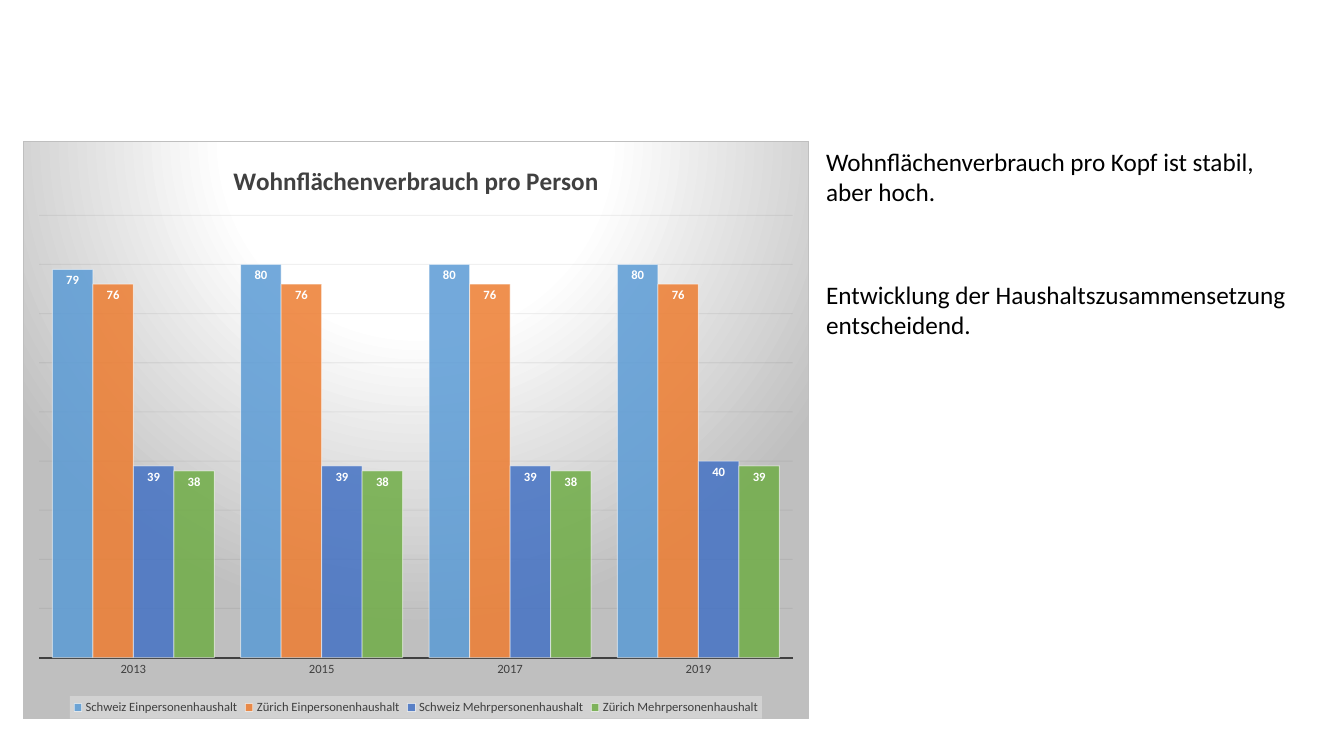
from lxml import etree
from pptx import Presentation
from pptx.chart.data import CategoryChartData
from pptx.dml.color import RGBColor
from pptx.enum.chart import XL_CHART_TYPE as ChartType
from pptx.enum.chart import XL_LABEL_POSITION as LabelPosition
from pptx.enum.chart import XL_LEGEND_POSITION as LegendPosition
from pptx.enum.chart import XL_TICK_LABEL_POSITION as TickLabels
from pptx.enum.chart import XL_TICK_MARK as TickMark
from pptx.enum.text import MSO_AUTO_SIZE as AutoSize
from pptx.oxml import parse_xml
from pptx.oxml.ns import nsdecls, qn
from pptx.util import Pt

FONT = "Calibri"
BLACK = RGBColor(0x00, 0x00, 0x00)
WHITE = RGBColor(0xFF, 0xFF, 0xFF)
DARK_GREY = RGBColor(0x40, 0x40, 0x40)
GRID = RGBColor(0x0D, 0x0D, 0x0D)
SILVER = RGBColor(0xBF, 0xBF, 0xBF)
PALE_GREY = RGBColor(0xF2, 0xF2, 0xF2)
BLUE = RGBColor(0x5B, 0x9B, 0xD5)
ORANGE = RGBColor(0xED, 0x7D, 0x31)
NAVY = RGBColor(0x44, 0x72, 0xC4)
GREEN = RGBColor(0x70, 0xAD, 0x47)

TITLE = "Wohnflächenverbrauch pro Person"
YEARS = ["2013", "2015", "2017", "2019"]
HOUSEHOLDS = [
    ("Schweiz Einpersonenhaushalt", (79, 80, 80, 80), BLUE),
    ("Zürich Einpersonenhaushalt", (76, 76, 76, 76), ORANGE),
    ("Schweiz Mehrpersonenhaushalt", (39, 39, 39, 40), NAVY),
    ("Zürich Mehrpersonenhaushalt", (38, 38, 38, 39), GREEN),
]
STATEMENTS = [
    ("Wohnflächenverbrauch pro Kopf ist stabil, aber hoch.", 100.8),
    ("Entwicklung der Haushaltszusammensetzung entscheidend.", 195.84),
]
GRADIENT_STOPS = [(0, WHITE), (39, WHITE), (100, SILVER)]
CHART_WIDTH, CHART_HEIGHT = 561.8, 413


def style_font(font, size, color, bold=False):
    font.name = FONT
    font.size = Pt(size)
    font.bold = bold
    font.color.rgb = color


def set_opacity(fill_parent, percent):
    for color in fill_parent.iterfind(qn("a:solidFill") + "/" + qn("a:srgbClr")):
        alpha = etree.SubElement(color, qn("a:alpha"))
        alpha.set("val", str(percent * 1000))


def style_line(chart_format, color, width, opacity=100):
    line = chart_format.line
    line.color.rgb = color
    line.width = Pt(width)
    if opacity < 100:
        set_opacity(line._get_or_add_ln(), opacity)


def fill_chart_area(chart):
    stops = "".join(
        f'<a:gs pos="{place * 1000}"><a:srgbClr val="{color}"/></a:gs>'
        for place, color in GRADIENT_STOPS
    )
    area = parse_xml(
        f'<c:spPr {nsdecls("c", "a")}><a:gradFill><a:gsLst>{stops}</a:gsLst>'
        '<a:path path="circle">'
        '<a:fillToRect l="50000" t="-80000" r="50000" b="180000"/>'
        f'</a:path></a:gradFill><a:ln w="{Pt(0.75)}"><a:solidFill>'
        f'<a:srgbClr val="{SILVER}"/></a:solidFill></a:ln></c:spPr>'
    )
    chart._chartSpace.find(qn("c:chart")).addnext(area)


def fill_legend(legend):
    box = parse_xml(
        f'<c:spPr {nsdecls("c", "a")}><a:solidFill><a:srgbClr val="{PALE_GREY}">'
        '<a:alpha val="39000"/></a:srgbClr></a:solidFill></c:spPr>'
    )
    legend._element.find(qn("c:txPr")).addprevious(box)


def place_plot(chart, left, top, width, height):
    plot_area = chart._chartSpace.find(qn("c:chart")).find(qn("c:plotArea"))
    for old in plot_area.findall(qn("c:layout")):
        plot_area.remove(old)
    shares = {
        "x": left / CHART_WIDTH,
        "y": top / CHART_HEIGHT,
        "w": width / CHART_WIDTH,
        "h": height / CHART_HEIGHT,
    }
    values = "".join(f'<c:{key} val="{share:.4f}"/>' for key, share in shares.items())
    plot_area.insert(0, parse_xml(
        f'<c:layout {nsdecls("c")}><c:manualLayout><c:layoutTarget val="inner"/>'
        f'<c:xMode val="edge"/><c:yMode val="edge"/>{values}'
        '</c:manualLayout></c:layout>'
    ))


def add_household_chart(page):
    data = CategoryChartData(number_format="0")
    data.categories = YEARS
    for name, values, color in HOUSEHOLDS:
        data.add_series(name, values)
    chart = page.shapes.add_chart(
        ChartType.COLUMN_CLUSTERED,
        Pt(16.2), Pt(100.8), Pt(CHART_WIDTH), Pt(CHART_HEIGHT), data,
    ).chart
    style_font(chart.font, 10, BLACK)

    chart.has_title = True
    span = chart.chart_title.text_frame.paragraphs[0].add_run()
    span.text = TITLE
    style_font(span.font, 18, DARK_GREY, True)

    chart.has_legend = True
    chart.legend.position = LegendPosition.BOTTOM
    chart.legend.include_in_layout = False
    style_font(chart.legend.font, 9, DARK_GREY)
    fill_legend(chart.legend)

    years = chart.category_axis
    years.major_tick_mark = TickMark.NONE
    years.tick_label_position = TickLabels.NEXT_TO_AXIS
    style_font(years.tick_labels.font, 9, DARK_GREY)
    style_line(years.format, DARK_GREY, 1.5)

    area = chart.value_axis
    area.visible = False
    area.major_tick_mark = TickMark.NONE
    area.minimum_scale, area.maximum_scale, area.major_unit = 0, 90, 10
    area.has_major_gridlines = True
    style_line(area.major_gridlines.format, GRID, 0.75, 5)

    plot = chart.plots[0]
    plot.gap_width = 65
    plot.overlap = 0
    plot.vary_by_categories = False
    for series, (name, values, color) in zip(plot.series, HOUSEHOLDS):
        series.format.fill.solid()
        series.format.fill.fore_color.rgb = color
        set_opacity(series._element.find(qn("c:spPr")), 85)
        style_line(series.format, WHITE, 0.75, 50)
        labels = series.data_labels
        labels.show_value = True
        labels.number_format = "0"
        labels.number_format_is_linked = False
        labels.position = LabelPosition.INSIDE_END
        style_font(labels.font, 9, WHITE, True)

    place_plot(chart, 11.4, 52.8, 539, 316.5)
    fill_chart_area(chart)


def add_statement(page, text, top):
    box = page.shapes.add_textbox(Pt(583), Pt(top), Pt(350), Pt(51))
    box.text_frame.word_wrap = True
    box.text_frame.auto_size = AutoSize.SHAPE_TO_FIT_TEXT
    span = box.text_frame.paragraphs[0].add_run()
    span.text = text
    style_font(span.font, 18, BLACK)


def main():
    deck = Presentation()
    deck.slide_width, deck.slide_height = Pt(960), Pt(540)
    page = deck.slides.add_slide(deck.slide_layouts[6])
    add_household_chart(page)
    for text, top in STATEMENTS:
        add_statement(page, text, top)
    deck.save("out.pptx")


if __name__ == "__main__":
    main()
